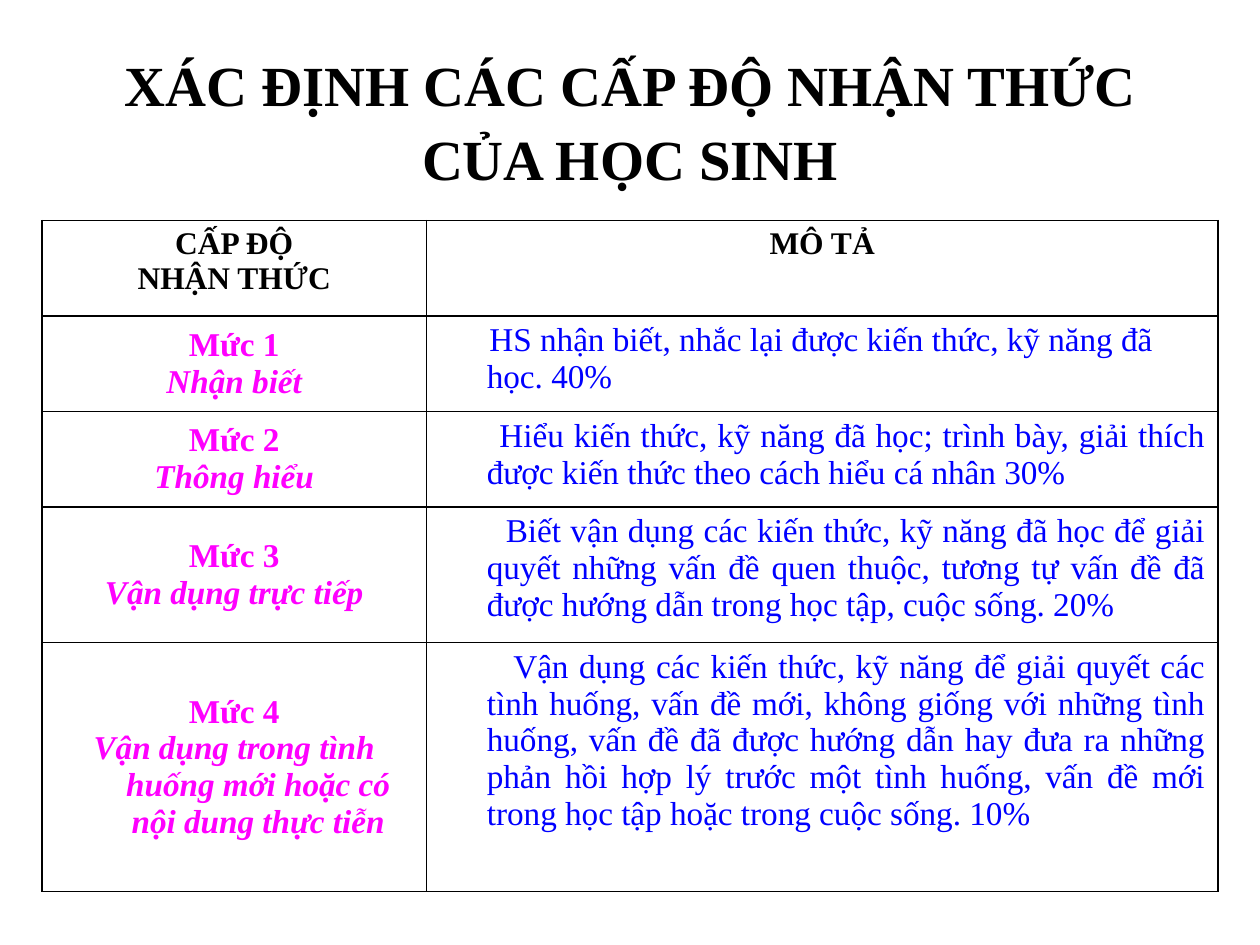
from lxml import etree
from pptx import Presentation
from pptx.dml.color import RGBColor
from pptx.enum.text import MSO_ANCHOR, PP_ALIGN
from pptx.oxml.ns import qn
from pptx.util import Inches, Pt

LEFT, CENTER, JUSTIFY = PP_ALIGN.LEFT, PP_ALIGN.CENTER, PP_ALIGN.JUSTIFY
TOP, MIDDLE = MSO_ANCHOR.TOP, MSO_ANCHOR.MIDDLE
WIDTH, HEIGHT = Inches(10), Inches(7.5)
FONT = "Times New Roman"
BLACK, MAGENTA, BLUE = "000000", "FF00FF", "0000FF"
HANGING = 0.38

TITLE = "XÁC ĐỊNH CÁC CẤP ĐỘ NHẬN THỨC CỦA HỌC SINH"
HEADINGS = (("CẤP ĐỘ", "NHẬN THỨC"), ("MÔ TẢ",))
LEVELS = [
    ("Mức 1", "Nhận biết", LEFT, 0.02,
     "HS nhận biết, nhắc lại được kiến thức, kỹ năng đã học. 40%"),
    ("Mức 2", "Thông hiểu", JUSTIFY, 0.1,
     "Hiểu kiến thức, kỹ năng đã học; trình bày, giải thích được kiến thức "
     "theo cách hiểu cá nhân 30%"),
    ("Mức 3", "Vận dụng trực tiếp", JUSTIFY, 0.15,
     "Biết vận dụng các kiến thức, kỹ năng đã học để giải quyết những vấn đề "
     "quen thuộc, tương tự vấn đề đã được hướng dẫn trong học tập, cuộc sống. 20%"),
    ("Mức 4", "Vận dụng trong tình huống mới hoặc có nội dung thực tiễn", JUSTIFY, 0.21,
     "Vận dụng các kiến thức, kỹ năng để giải quyết các tình huống, vấn đề mới, "
     "không giống với những tình huống, vấn đề đã được hướng dẫn hay đưa ra những "
     "phản hồi hợp lý trước một tình huống, vấn đề mới trong học tập hoặc trong "
     "cuộc sống. 10%"),
]
COLUMN_SHARES = (3.05, 6.28)
ROW_SHARES = (0.76, 0.76, 0.76, 1.08, 1.98)


def color(value):
    return RGBColor.from_string(value)


def share_box(left, top, width, height):
    return (int(WIDTH * left), int(HEIGHT * top),
            int(WIDTH * width), int(HEIGHT * height))


def write_text(frame, text, size=19, ink=BLACK, bold=False, italic=False,
               align=CENTER, margin=0, first=0, spacing=None):
    para = frame.paragraphs[0]
    if para.runs:
        para = frame.add_paragraph()
    para.alignment = align
    para.line_spacing = spacing
    properties = para._p.get_or_add_pPr()
    properties.set("marL", str(Inches(margin)))
    properties.set("indent", str(Inches(first)))
    span = para.add_run()
    span.text = text
    span.font.name = FONT
    span.font.size = Pt(size)
    span.font.bold = bold
    span.font.italic = italic
    span.font.color.rgb = color(ink)


def style_cell(cell, anchor):
    properties = cell._tc.get_or_add_tcPr()
    for side in ("lnL", "lnR", "lnT", "lnB"):
        line = etree.SubElement(properties, qn(f"a:{side}"), w=str(Pt(1)))
        fill = etree.SubElement(line, qn("a:solidFill"))
        etree.SubElement(fill, qn("a:srgbClr"), val=BLACK)
    cell.fill.background()
    cell.vertical_anchor = anchor


def add_title(page, box):
    frame = page.shapes.add_textbox(*box).text_frame
    frame.word_wrap = True
    frame.vertical_anchor = MIDDLE
    write_text(frame, TITLE, size=32.4, bold=True, spacing=1.08)


def fill_headings(table):
    for column, lines in enumerate(HEADINGS):
        cell = table.cell(0, column)
        style_cell(cell, TOP)
        for text in lines:
            write_text(cell.text_frame, text, size=18, bold=True,
                       margin=HANGING, first=-HANGING)


def fill_level(table, row, level):
    name, skill, align, first, description = level
    label, detail = table.cell(row, 0), table.cell(row, 1)
    style_cell(label, MIDDLE)
    style_cell(detail, TOP)
    for text, italic in ((name, False), (skill, True)):
        write_text(label.text_frame, text, ink=MAGENTA, bold=True, italic=italic,
                   margin=HANGING, first=-HANGING)
    write_text(detail.text_frame, description, ink=BLUE, align=align,
               margin=HANGING, first=first)


def add_levels_table(page, box):
    table = page.shapes.add_table(len(ROW_SHARES), len(COLUMN_SHARES), *box).table
    table.first_row = table.horz_banding = False
    for column, share in zip(table.columns, COLUMN_SHARES):
        column.width = int(box[2] * share / sum(COLUMN_SHARES))
    for row, share in zip(table.rows, ROW_SHARES):
        row.height = int(box[3] * share / sum(ROW_SHARES))
    fill_headings(table)
    for row, level in enumerate(LEVELS, start=1):
        fill_level(table, row, level)


def main():
    deck = Presentation()
    deck.slide_width, deck.slide_height = WIDTH, HEIGHT
    page = deck.slides.add_slide(deck.slide_layouts[6])
    add_title(page, share_box(0.075, 0.02, 0.85, 0.21))
    add_levels_table(page, share_box(1 / 30, 7 / 30, 14 / 15, 0.71))
    deck.save("out.pptx")


if __name__ == "__main__":
    main()
